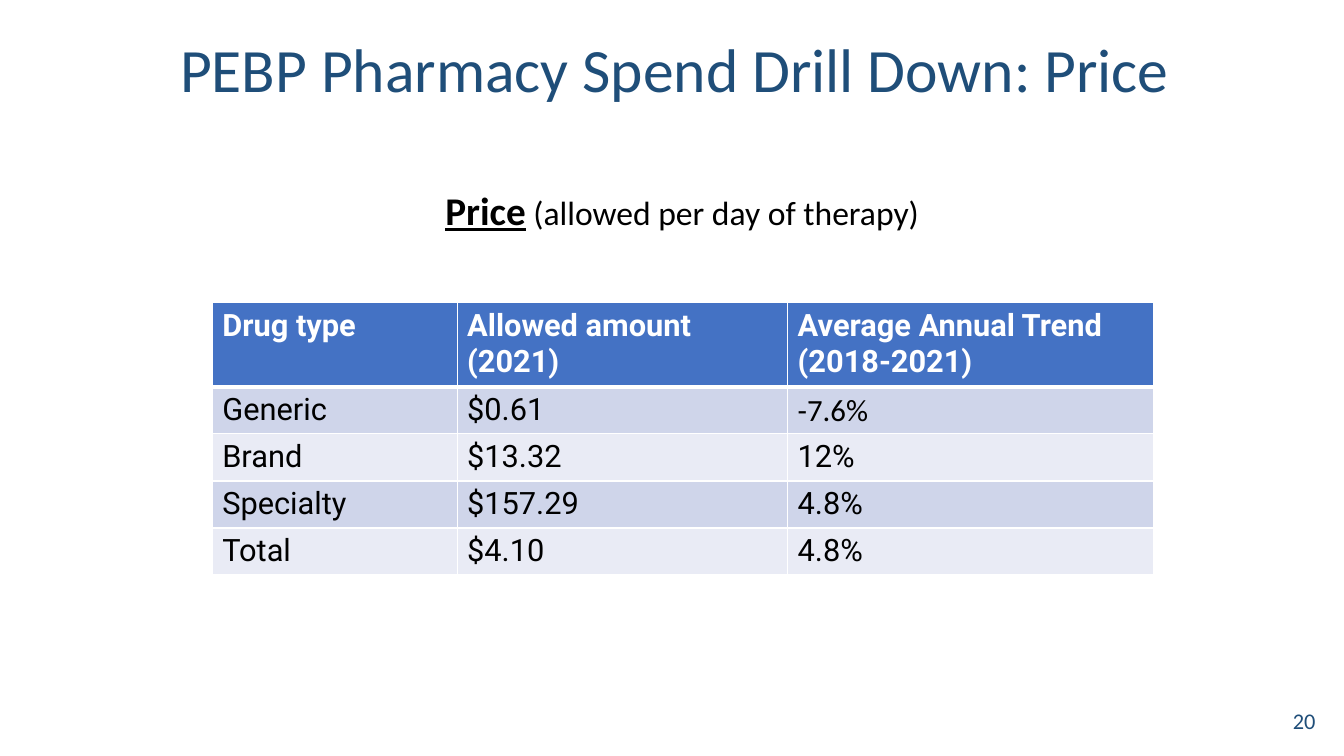
from lxml.etree import SubElement
from pptx import Presentation
from pptx.dml.color import RGBColor
from pptx.enum.text import MSO_ANCHOR as Anchor, PP_ALIGN as Align
from pptx.oxml.ns import qn
from pptx.util import Cm, Pt

NAVY = RGBColor(0x1F, 0x4E, 0x79)
BLACK = RGBColor(0, 0, 0)
WHITE = RGBColor(0xFF, 0xFF, 0xFF)
HEADER_BLUE = RGBColor(0x44, 0x72, 0xC4)
BANDS = [RGBColor(0xCF, 0xD5, 0xEA), RGBColor(0xE9, 0xEB, 0xF5)]

COLUMN_WIDTHS = [6.17, 8.33, 9.22]
HEADER_HEIGHT, ROW_HEIGHT = 2.04, 1.17
PRICES = [
    ["Drug type", "Allowed amount (2021)", "Average Annual Trend\n(2018-2021)"],
    ["Generic", "$0.61", "-7.6%"],
    ["Brand", "$13.32", "12%"],
    ["Specialty", "$157.29", "4.8%"],
    ["Total", "$4.10", "4.8%"],
]


def add_run(p, text, size, color, font="Calibri", bold=False, underline=False):
    r = p.add_run()
    r.text = text
    f = r.font
    f.name, f.size, f.bold, f.underline = font, Pt(size), bold, underline
    f.color.rgb = color


def add_text_box(s, box, align, anchor=Anchor.MIDDLE):
    """Add a wrapped text box and return its first paragraph."""
    tf = s.shapes.add_textbox(*map(Cm, box)).text_frame
    tf.word_wrap = True
    tf.vertical_anchor = anchor
    p = tf.paragraphs[0]
    p.alignment = align
    return p


def add_title(s, box):
    p = add_text_box(s, box, Align.CENTER)
    p.line_spacing = 0.9
    add_run(p, "PEBP Pharmacy Spend Drill Down: Price ", 44, NAVY)


def add_subtitle(s, box):
    p = add_text_box(s, box, Align.CENTER, Anchor.TOP)
    p.space_before = p.space_after = Pt(18)
    add_run(p, "Price", 28, BLACK, bold=True, underline=True)
    add_run(p, " ", 24, BLACK, bold=True)
    add_run(p, "(allowed per day of therapy)", 24, BLACK)


def add_page_number(s, box):
    p = add_text_box(s, box, Align.RIGHT)
    add_run(p, "20", 16, NAVY)


def set_borders(cell, top, bottom):
    """Draw white cell borders; top and bottom are widths in points."""
    tc_pr = cell._tc.get_or_add_tcPr()
    widths = {"a:lnL": 1, "a:lnR": 1, "a:lnT": top, "a:lnB": bottom}
    for i, (tag, width) in enumerate(widths.items()):
        ln = SubElement(tc_pr, qn(tag), w=str(Pt(width)))
        fill = SubElement(ln, qn("a:solidFill"))
        SubElement(fill, qn("a:srgbClr"), val=str(WHITE))
        tc_pr.insert(i, ln)


def add_price_table(s, left, top):
    heights = [HEADER_HEIGHT] + [ROW_HEIGHT] * (len(PRICES) - 1)
    table = s.shapes.add_table(
        len(PRICES), len(COLUMN_WIDTHS), Cm(left), Cm(top),
        Cm(sum(COLUMN_WIDTHS)), Cm(sum(heights))).table
    for column, width in zip(table.columns, COLUMN_WIDTHS):
        column.width = Cm(width)
    for i, (row, values) in enumerate(zip(table.rows, PRICES)):
        row.height = Cm(heights[i])
        header = i == 0
        for cell, value in zip(row.cells, values):
            cell.fill.solid()
            cell.fill.fore_color.rgb = HEADER_BLUE if header else BANDS[(i - 1) % 2]
            set_borders(cell, top=3 if i == 1 else 1, bottom=3 if header else 1)
            font = "Calibri" if value.startswith("-") else "Roboto"
            tf = cell.text_frame
            for n, line in enumerate(value.split("\n")):
                p = tf.add_paragraph() if n else tf.paragraphs[0]
                add_run(p, line, 22, WHITE if header else BLACK, font, bold=header)


def main():
    prs = Presentation()
    prs.slide_width, prs.slide_height = Cm(33.87), Cm(19.05)
    s = prs.slides.add_slide(prs.slide_layouts[6])
    add_subtitle(s, (0.99, 4.57, 32.41, 13.59))
    add_page_number(s, (25.78, 17.65, 7.62, 1.02))
    add_title(s, (0.99, 0, 32.41, 3.68))
    add_price_table(s, 5.35, 7.63)
    prs.save("out.pptx")


if __name__ == "__main__":
    main()
